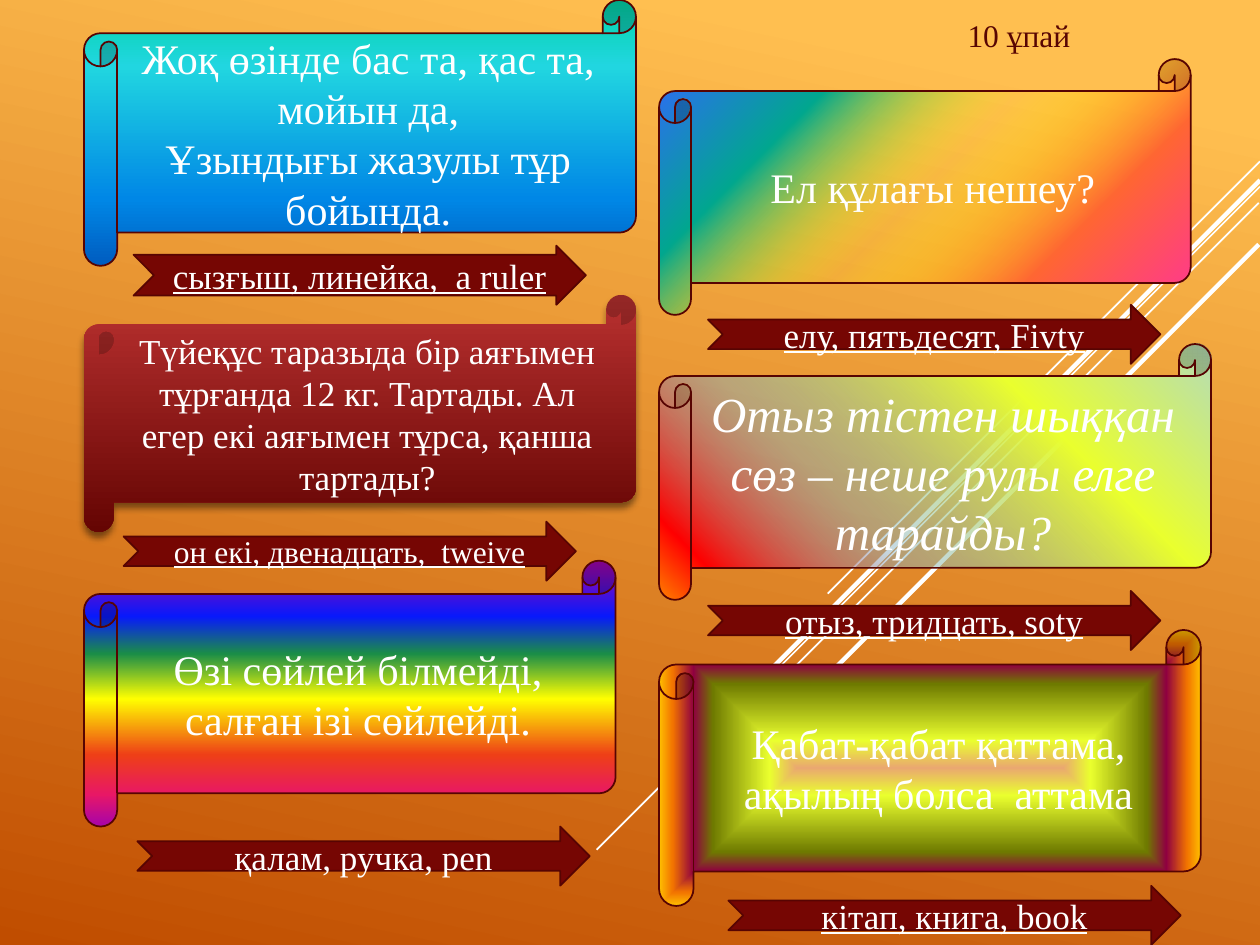
import dataclasses

import pptx
import pptx.dml.color
import pptx.enum.shapes
import pptx.enum.text
import pptx.oxml
import pptx.oxml.ns
import pptx.util

Pt = pptx.util.Pt
SHAPE = pptx.enum.shapes.MSO_SHAPE
ALIGN = pptx.enum.text.PP_ALIGN
NS = pptx.oxml.ns.nsdecls("a")


@dataclasses.dataclass(frozen=True)
class Theme:
    face: str = "Times New Roman"
    white: str = "FFFFFF"
    dark: str = "580502"
    edge: str = "570402"
    arrow: str = "760603"
    small: int = 18
    base: int = 20
    large: int = 24
    huge: int = 28
    thin: float = 1
    thick: float = 2.5


T = Theme()

# Gradients: stops are (position, colour[, opacity]), all in percent.
BACK = ([(10, "FFBF50"), (100, "C04D00")], 102)
OCEAN = ([(0, "03D4A8"), (25, "21D6E0"), (75, "0087E6"), (100, "005CBF")], 90)
WINE = ([(0, "B93130"), (100, "650503")], 90)
RAINBOW = ([(0, "A603AB"), (21, "0819FB"), (35, "1A8D48"), (52, "FFFF00"),
            (73, "EE3F17"), (88, "E81766"), (100, "A603AB")], 90)
CORNER = ([(0, "FF3399"), (25, "FF6633"), (50, "FFFF00", 7),
           (75, "01A78F"), (100, "3366FF")], ("circle", 100, 100, 0, 0))
LIME = ([(0, "B4DCBA"), (30, "EAFF2E"), (65, "87B2C3", 47),
         (90, "FF0000"), (100, "FF8200")], 135)
FRAME = ([(0, "EAA870"), (20, "EAFF2E"), (61, "6E7A00"), (75, "8F0040"),
          (90, "F27300"), (100, "FFBF00")], ("shape", 50, 50, 50, 50))

# Riddles: text, gradient, box, font changes, shadow.
# Answers: text, left and top, font changes, shaft thickness.
LEFT, RIGHT = 48, 376.6
ARROW = (258.5, 33.8)
LINED = {"underline": True}
COLUMNS = [
    ([("Отыз тістен шыққан сөз – неше рулы елге тарайды?", LIME,
       (RIGHT, 196.6, 315.4, 146.2), {"size": Pt(T.huge), "italic": True}, False),
      ("Ел құлағы нешеу?", CORNER, (RIGHT, 33.8, 303.8, 146.2), {}, False),
      ("Қабат-қабат қаттама, ақылың болса  аттама", FRAME,
       (RIGHT, 360, 309.6, 157.7), {}, False)],
     [("кітап, книга, book", (416.2, 506.2), LINED, 0.5),
      ("отыз, тридцать, soty", (404.6, 337.7), LINED, 0.5),
      ("елу, пятьдесят, Fivty", (404.6, 174.2), LINED, 0.5)]),
    ([("Жоқ өзінде бас та, қас та, мойын да,\vҰзындығы жазулы тұр бойында.",
       OCEAN, (LEFT, 0, 315.4, 151.9), {}, False),
      ("Түйеқұс таразыда бір аяғымен тұрғанда 12 кг. Тартады. "
       "Ал егер екі аяғымен тұрса, қанша тартады?",
       WINE, (LEFT, 168.5, 315.4, 135.4), {"size": Pt(T.base)}, True),
      ("Өзі сөйлей білмейді, салған ізі сөйлейді.", RAINBOW,
       (LEFT, 320.4, 303.8, 151.9), {}, False)],
     [("сызғыш, линейка,  a ruler", (76.3, 140.4), LINED, 0.69),
      ("он екі, двенадцать,  tweive", (70.6, 298.1),
       {"size": Pt(T.small), **LINED}, 0.5),
      ("қалам, ручка, pen", (78.5, 472.3), {}, 0.5)]),
]

# Rays at 45 degrees: right end, top, run to the lower left, width.
RAYS = [
    (720, 92.2, 247, T.thin),
    (720, 106.6, 379, T.thin),
    (719.3, 115.9, 308.2, T.thin),
    (720, 103, 302.4, T.thick),
    (719.3, 139.7, 270, T.thick),
]


def rgb(code):
    return pptx.dml.color.RGBColor.from_string(code)


def blend(fill, root, grad):
    """Give fill, which lies under root, a gradient by angle or by path."""
    stops, way = grad
    fill.gradient()
    marks = ""
    for pos, code, *alpha in stops:
        clear = f'<a:alpha val="{alpha[0] * 1000}"/>' if alpha else ""
        marks += (f'<a:gs pos="{pos * 1000}"><a:srgbClr val="{code}">'
                  f'{clear}</a:srgbClr></a:gs>')
    if isinstance(way, tuple):
        kind, *sides = way
        rect = " ".join(f'{side}="{val * 1000}"' for side, val in zip("ltrb", sides))
        run = f'<a:path path="{kind}"><a:fillToRect {rect}/></a:path>'
    else:
        run = f'<a:lin ang="{way * 60000}" scaled="0"/>'
    old = root.xpath(".//a:gradFill")[0]
    new = pptx.oxml.parse_xml(
        f'<a:gradFill {NS}><a:gsLst>{marks}</a:gsLst>{run}</a:gradFill>')
    old.getparent().replace(old, new)


def write(frame, text, align, **style):
    para = frame.paragraphs[0]
    para.text = text
    para.alignment = align
    color = style.pop("color", T.white)
    for run in para.runs:
        for key, val in {"name": T.face, **style}.items():
            setattr(run.font, key, val)
        run.font.color.rgb = rgb(color)


def block(slide, kind, box, text, style):
    shape = slide.shapes.add_shape(kind, *map(Pt, box))
    shape.shadow.inherit = False
    shape.line.color.rgb = rgb(T.edge)
    shape.line.width = Pt(T.thin)
    shape.text_frame.word_wrap = True
    shape.text_frame.vertical_anchor = pptx.enum.text.MSO_ANCHOR.MIDDLE
    write(shape.text_frame, text, ALIGN.CENTER, **style)
    return shape


def riddle(slide, box, text, grad, style, shade):
    shape = block(slide, SHAPE.HORIZONTAL_SCROLL, box, text,
                  {"size": Pt(T.large), **style})
    blend(shape.fill, shape.element.spPr, grad)
    if shade:
        shape.line.fill.background()
        shape.element.spPr.xpath("a:effectLst")[0].append(pptx.oxml.parse_xml(
            f'<a:outerShdw {NS} blurRad="{Pt(4)}" dist="{Pt(3)}" dir="5400000" '
            'rotWithShape="0"><a:srgbClr val="000000"><a:alpha val="46000"/>'
            '</a:srgbClr></a:outerShdw>'))


def answer(slide, box, text, style, shaft):
    shape = block(slide, SHAPE.NOTCHED_RIGHT_ARROW, box, text,
                  {"size": Pt(T.base), **style})
    shape.fill.solid()
    shape.fill.fore_color.rgb = rgb(T.arrow)
    shape.adjustments[0] = shaft


def rays(slide):
    for right, top, run, width in RAYS:
        line = slide.shapes.add_connector(
            pptx.enum.shapes.MSO_CONNECTOR.STRAIGHT,
            *map(Pt, (right, top, right - run, top + run)))
        line.line.color.rgb = rgb(T.white)
        line.line.width = Pt(width)
        line.element.spPr.append(pptx.oxml.parse_xml(f"<a:effectLst {NS}/>"))


def score(slide, box):
    frame = slide.shapes.add_textbox(*map(Pt, box)).text_frame
    frame.word_wrap = False
    frame.auto_size = pptx.enum.text.MSO_AUTO_SIZE.SHAPE_TO_FIT_TEXT
    write(frame, "10 ұпай", ALIGN.LEFT, size=Pt(T.small), color=T.dark)


def main():
    deck = pptx.Presentation()
    deck.slide_width, deck.slide_height = Pt(720), Pt(540)
    slide = deck.slides.add_slide(deck.slide_layouts[6])
    blend(slide.background.fill, slide.element, BACK)
    rays(slide)
    for riddles, answers in COLUMNS:
        for text, grad, box, style, shade in riddles:
            riddle(slide, box, text, grad, style, shade)
        for text, spot, style, shaft in answers:
            answer(slide, spot + ARROW, text, style, shaft)
    score(slide, (545.8, 5.8, 74.2, 28.8))
    deck.save("out.pptx")


if __name__ == "__main__":
    main()
